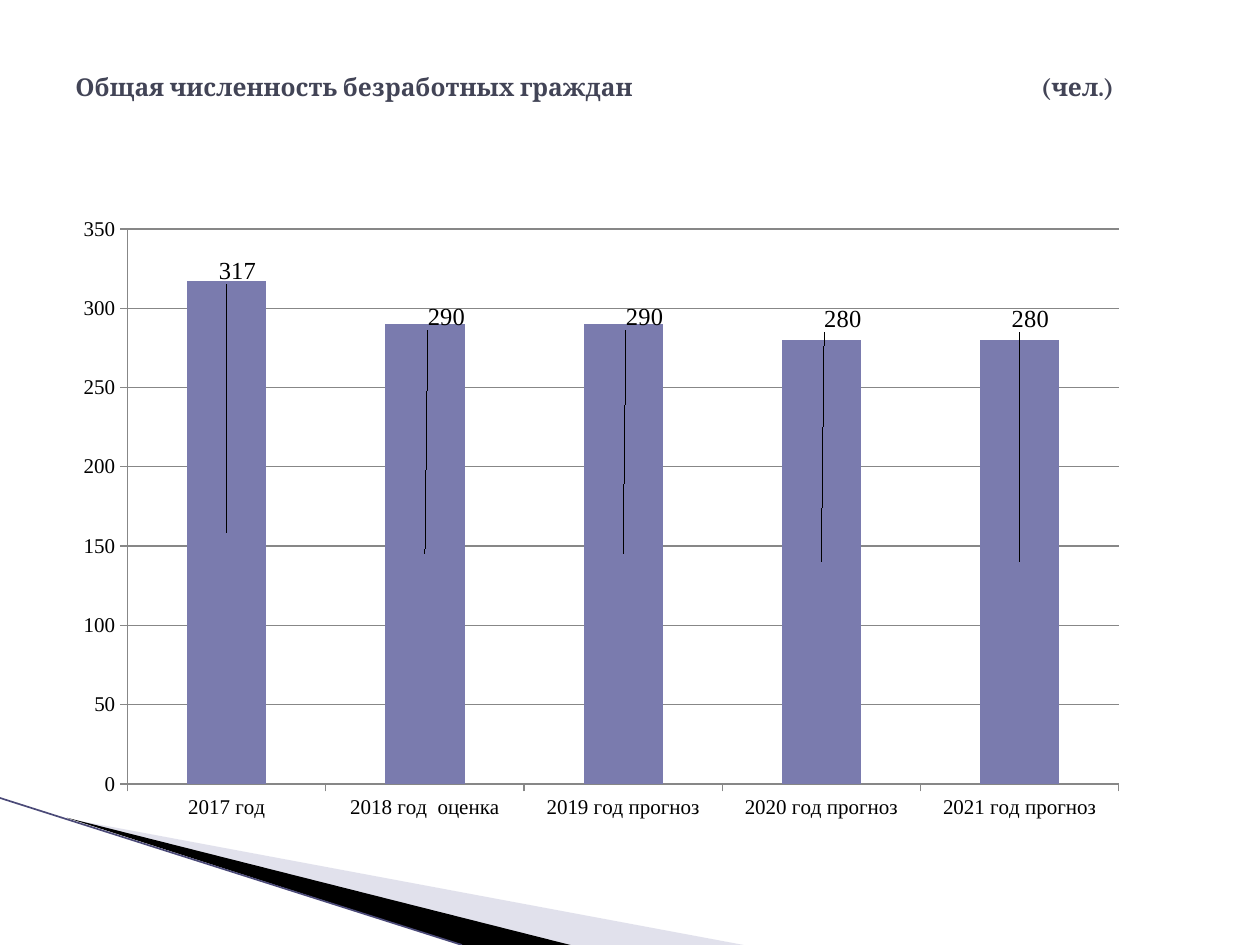
from dataclasses import dataclass

from lxml import etree
from pptx import Presentation
from pptx import util as u
from pptx.chart.data import CategoryChartData
from pptx.dml.color import RGBColor
from pptx.enum import chart as charts, shapes, text
from pptx.oxml import parse_xml
from pptx.oxml.ns import nsdecls, qn

Pt = u.Pt


@dataclass(frozen=True)
class Theme:
    title_color: str = "424456"
    text_color: str = "000000"
    bar_color: str = "7A7BAE"
    axis_color: str = "878787"
    pale_wedge: str = "B6B6D1"
    dark_wedge: str = "000000"
    edge_color: str = "4B4A78"
    title_font: str = "Cambria"
    chart_font: str = "Times New Roman"
    title_size: float = 14
    label_size: float = 14
    axis_size: float = 12


def rgb(value):
    return RGBColor.from_string(value)


def format_font(font, name, size, color, bold=False):
    font.name, font.size, font.bold = name, Pt(size), bold
    font.color.rgb = rgb(color)


def write_text(paragraph, content, *, right_tab=None, **font_format):
    if right_tab is not None:
        tabs = etree.SubElement(paragraph._p.get_or_add_pPr(), qn("a:tabLst"))
        etree.SubElement(tabs, qn("a:tab"), pos=str(Pt(right_tab)), algn="r")
    run = paragraph.add_run()
    run.text = content
    format_font(run.font, **font_format)


def manual_layout(x, y, **extra):
    """Return a c:layout; an inner target turns offsets into edges."""
    inner = "w" in extra
    values = {"x": x, "y": y, **extra}
    modes = {"layoutTarget": "inner", "xMode": "edge", "yMode": "edge"} if inner else {}
    body = "".join(f'<c:{key} val="{value}"/>' for key, value in {**modes, **values}.items())
    return parse_xml(f'<c:layout {nsdecls("c")}><c:manualLayout>{body}</c:manualLayout></c:layout>')


class SlideBuilder:
    def __init__(self, slide, theme):
        self.slide, self.theme = slide, theme

    def wedge(self, points, color, opacity=100):
        start, *rest = [(Pt(x), Pt(y)) for x, y in points]
        builder = self.slide.shapes.build_freeform(*start)
        builder.add_line_segments(rest, close=True)
        shape = builder.convert_to_shape()
        shape.shadow.inherit = False
        shape.fill.solid()
        shape.fill.fore_color.rgb = rgb(color)
        shape.line.fill.background()
        if opacity < 100:
            color_element = shape._element.spPr.find(".//" + qn("a:srgbClr"))
            etree.SubElement(color_element, qn("a:alpha"), val=str(opacity * 1000))

    def line(self, start, end, color, width):
        connector = self.slide.shapes.add_connector(
            shapes.MSO_CONNECTOR.STRAIGHT, *(Pt(value) for value in (*start, *end)))
        connector.line.color.rgb = rgb(color)
        connector.line.width = Pt(width)
        etree.SubElement(connector._element.spPr, qn("a:effectLst"))

    def title(self, box, content, right_tab):
        frame = self.slide.shapes.add_textbox(*map(Pt, box)).text_frame
        frame.word_wrap = True
        frame.vertical_anchor = text.MSO_ANCHOR.MIDDLE
        theme = self.theme
        write_text(frame.paragraphs[0], content, right_tab=right_tab, name=theme.title_font,
                   size=theme.title_size, color=theme.title_color, bold=True)

    def column_chart(self, box, categories, values, label_offsets, plot_area):
        theme = self.theme
        data = CategoryChartData(number_format="#,##0")
        data.categories = categories
        data.add_series("Series 1", values)
        chart = self.slide.shapes.add_chart(
            charts.XL_CHART_TYPE.COLUMN_STACKED, *map(Pt, box), data).chart
        chart.has_legend = chart.has_title = False
        format_font(chart.font, theme.chart_font, theme.axis_size, theme.text_color)

        for axis in (chart.category_axis, chart.value_axis):
            axis.major_tick_mark = charts.XL_TICK_MARK.OUTSIDE
            axis.format.line.color.rgb = rgb(theme.axis_color)
            format_font(axis.tick_labels.font, theme.chart_font, theme.axis_size, theme.text_color)
        scale = chart.value_axis
        scale.minimum_scale, scale.maximum_scale, scale.major_unit = 0, 350, 50
        scale.has_major_gridlines = True
        scale.major_gridlines.format.line.color.rgb = rgb(theme.axis_color)

        plot = chart.plots[0]
        plot.gap_width, plot.overlap, plot.vary_by_categories = 150, 100, False
        series = plot.series[0]
        series.format.fill.solid()
        series.format.fill.fore_color.rgb = rgb(theme.bar_color)
        series.data_labels.show_value = True
        for index, offset in enumerate(label_offsets):
            format_font(series.points[index].data_label.font,
                        theme.chart_font, theme.label_size, theme.text_color)
            label = series._element.findall(".//" + qn("c:dLbl"))[index]
            label.find(qn("c:idx")).addnext(manual_layout(*offset))

        area = chart._chartSpace.chart.plotArea
        for old_layout in area.findall(qn("c:layout")):
            area.remove(old_layout)
        area.insert(0, manual_layout(**plot_area))


def main():
    presentation = Presentation()
    presentation.slide_width, presentation.slide_height = Pt(720), Pt(540)
    theme = Theme()
    builder = SlideBuilder(presentation.slides.add_slide(presentation.slide_layouts[6]), theme)

    builder.wedge([(39.6, 468), (425, 540), (325, 540)], theme.pale_wedge, opacity=40)
    builder.wedge([(38.2, 467.3), (326, 540), (264, 540)], theme.dark_wedge)
    builder.line((0, 456), (264, 540), theme.edge_color, 0.95)
    builder.column_chart(
        (36, 116.6, 615.6, 356.4),
        ["2017 год", "2018 год  оценка", "2019 год прогноз", "2020 год прогноз", "2021 год прогноз"],
        [317, 290, 290, 280, 280],
        label_offsets=[(0.01, -0.42), (0.02, -0.38), (0.02, -0.38), (0.02, -0.39), (0.01, -0.39)],
        plot_area={"x": 0.06, "y": 0.04, "w": 0.92, "h": 0.89})
    builder.title((36, 21.6, 648, 55.4), "Общая численность безработных граждан\t(чел.)", right_tab=593.5)
    presentation.save("out.pptx")


if __name__ == "__main__":
    main()
